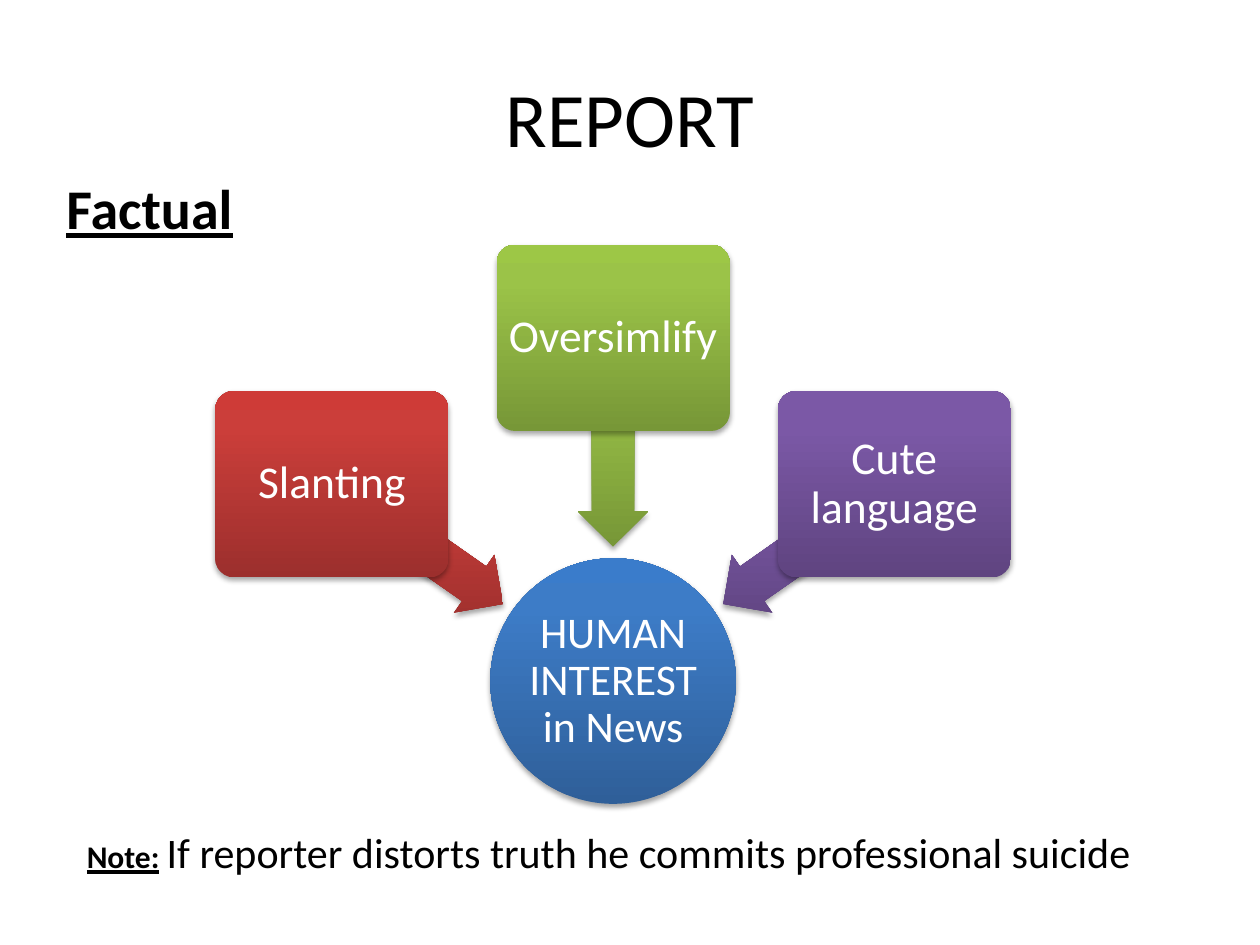
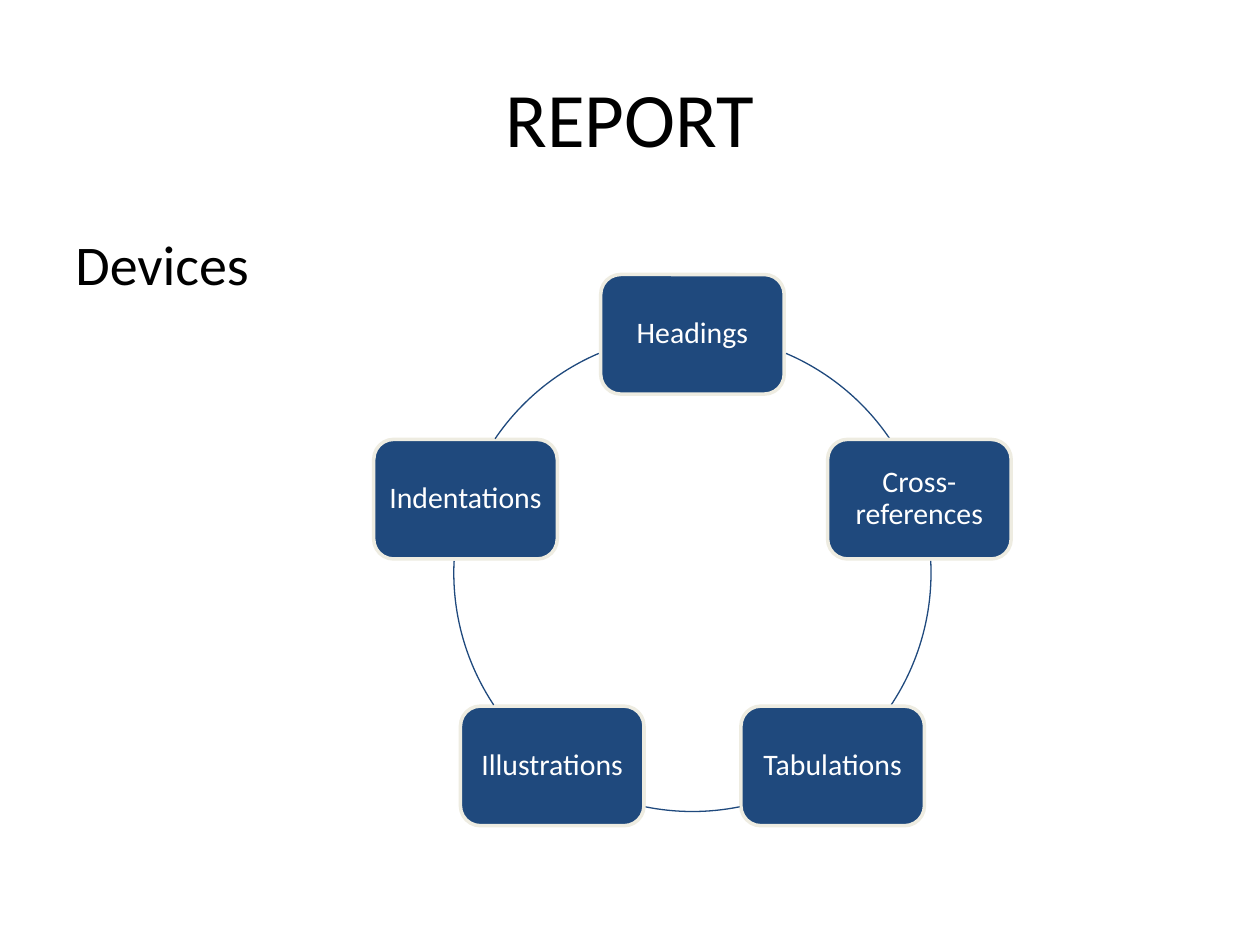
from copy import deepcopy
from math import cos, radians, sin

from lxml.etree import SubElement
from pptx import Presentation
from pptx.dml.color import RGBColor
from pptx.enum.shapes import MSO_SHAPE
from pptx.enum.text import MSO_ANCHOR, PP_ALIGN
from pptx.oxml.ns import qn
from pptx.util import Cm, Pt

FONT = "Calibri"
BLACK, WHITE, NAVY, CREAM = "000000", "FFFFFF", "1F497D", "EEECE1"
TITLE = "REPORT"
TITLE_AREA = (1.27, 0.76, 22.86, 3.18)

HUB = "HUMAN INTEREST in News"
HUB_COLOURS = ("2F5F99", "3D7CC7", "3A7CCB")
HUB_CENTRE, HUB_SIZE = (12.36, 13.73), 4.95
THREATS = [
    ("Slanting", 215, ("9C2F2D", "CB3E3A", "CE3B37")),
    ("Oversimlify", 270, ("779737", "9BC348", "9DC746")),
    ("Cute language", 325, ("5F4480", "7B58A6", "7C57A8")),
]
THREAT_RADIUS, THREAT_SIZE = 6.92, (4.7, 3.76)
ARROW_RADIUS, ARROW_SIZE = 4.81, (4.2, 1.42)
NOTE_LABEL = "Note:"
NOTE = "If reporter distorts truth he commits professional suicide"

DEVICES = ["Headings", "Cross-references", "Tabulations", "Illustrations", "Indentations"]
RING_CENTRE, RING_RADIUS = (13.96, 11.55), 4.81
DEVICE_SIZE = (3.7, 2.41)
RING_ARCS = [(293.1, 325.8), (357.1, 33.6), (78.6, 101.4), (146.4, 182.9), (214.2, 246.9)]


def colour(value):
    return RGBColor.from_string(value)


def style_font(font, size, value, bold=False, underline=False):
    font.name, font.size, font.bold, font.underline = FONT, Pt(size), bold, underline
    font.color.rgb = colour(value)


def on_circle(centre, radius, angle):
    x, y = centre
    return x + radius * cos(radians(angle)), y + radius * sin(radians(angle))


def add_centred(page, kind, centre, size, adjustments=()):
    (x, y), (width, height) = centre, size
    shape = page.shapes.add_shape(
        kind, Cm(x - width / 2), Cm(y - height / 2), Cm(width), Cm(height))
    shape.shadow.inherit = False
    for index, value in enumerate(adjustments):
        shape.adjustments[index] = value
    return shape


def shade(shape, colours):
    """Give a shape a three-stop upward gradient and a soft shadow below it."""
    shape.line.fill.background()
    shape.fill.gradient()
    properties = shape._element.spPr
    gradient = properties.find(qn("a:gradFill"))
    gradient.set("rotWithShape", "0")
    stop_list = gradient.find(qn("a:gsLst"))
    stop_list.append(deepcopy(stop_list[-1]))
    shape.fill.gradient_angle = 90
    for stop, position, value in zip(shape.fill.gradient_stops, (0, 0.8, 1), colours):
        stop.position = position
        stop.color.rgb = colour(value)
    shadow = SubElement(
        properties.find(qn("a:effectLst")), qn("a:outerShdw"),
        blurRad=str(Pt(3.1)), dist=str(Pt(1.8)), dir="5400000", rotWithShape="0")
    tone = SubElement(shadow, qn("a:srgbClr"), val=BLACK)
    SubElement(tone, qn("a:alpha"), val="35000")


def label(shape, text, size, inset):
    frame = shape.text_frame
    frame.word_wrap = True
    frame.vertical_anchor = MSO_ANCHOR.MIDDLE
    frame.margin_left = frame.margin_right = Cm(inset)
    frame.margin_top = frame.margin_bottom = Cm(inset)
    para = frame.paragraphs[0]
    para.text = text
    para.alignment = PP_ALIGN.CENTER
    para.line_spacing = 0.9
    style_font(para.font, size, WHITE)


def add_page(deck):
    page = deck.slides.add_slide(deck.slide_layouts[5])
    title = page.shapes.title
    title.left, title.top, title.width, title.height = map(Cm, TITLE_AREA)
    title.text_frame.vertical_anchor = MSO_ANCHOR.MIDDLE
    para = title.text_frame.paragraphs[0]
    para.text = TITLE
    para.alignment = PP_ALIGN.CENTER
    style_font(para.font, 44, BLACK)
    return page


def add_text(page, left, top, width, height):
    box = page.shapes.add_textbox(Cm(left), Cm(top), Cm(width), Cm(height))
    box.text_frame.word_wrap = True
    return box.text_frame.paragraphs[0]


def add_heading(page, text, left, top, **emphasis):
    para = add_text(page, left, top, 22.86, 1.6)
    para.text = text
    style_font(para.font, 32, BLACK, **emphasis)


def build_factual(deck):
    page = add_page(deck)
    add_heading(page, "Factual", 1.09, 3.38, bold=True, underline=True)
    hub = add_centred(page, MSO_SHAPE.OVAL, HUB_CENTRE, (HUB_SIZE, HUB_SIZE))
    shade(hub, HUB_COLOURS)
    label(hub, HUB, 25, 0.05)
    for text, angle, colours in THREATS:
        arrow = add_centred(page, MSO_SHAPE.LEFT_ARROW,
                            on_circle(HUB_CENTRE, ARROW_RADIUS, angle), ARROW_SIZE, (0.6, 0.5))
        arrow.rotation = angle
        shade(arrow, colours)
        threat = add_centred(page, MSO_SHAPE.ROUNDED_RECTANGLE,
                             on_circle(HUB_CENTRE, THREAT_RADIUS, angle), THREAT_SIZE, (0.1,))
        shade(threat, colours)
        label(threat, text, 26, 0.12)
    para = add_text(page, 1.5, 16.54, 22.4, 1.27)
    for text, size, marked in ((NOTE_LABEL, 18, True), (" ", 18, False), (NOTE, 24, False)):
        span = para.add_run()
        span.text = text
        style_font(span.font, size, BLACK, bold=marked, underline=marked)


def build_devices(deck):
    page = add_page(deck)
    add_heading(page, "Devices", 1.27, 4.5)
    for index, (text, ends) in enumerate(zip(DEVICES, RING_ARCS)):
        angle = -90 + index * 360 / len(DEVICES)
        device = add_centred(page, MSO_SHAPE.ROUNDED_RECTANGLE,
                             on_circle(RING_CENTRE, RING_RADIUS, angle), DEVICE_SIZE)
        device.fill.solid()
        device.fill.fore_color.rgb = colour(NAVY)
        device.line.color.rgb = colour(CREAM)
        device.line.width = Pt(2)
        label(device, text, 17, 0.17)
        arc = add_centred(page, MSO_SHAPE.ARC, RING_CENTRE, (2 * RING_RADIUS, 2 * RING_RADIUS),
                          [end * 0.6 * 100 / 100 * 100 / 100 for end in ends])
        arc.adjustments[0], arc.adjustments[1] = (end * 0.6 for end in ends)
        arc.fill.background()
        arc.line.color.rgb = colour(NAVY)
        arc.line.width = Pt(0.75)


def main():
    deck = Presentation()
    deck.slide_width, deck.slide_height = Cm(25.4), Cm(19.05)
    build_factual(deck)
    build_devices(deck)
    deck.save("out.pptx")


if __name__ == "__main__":
    main()
